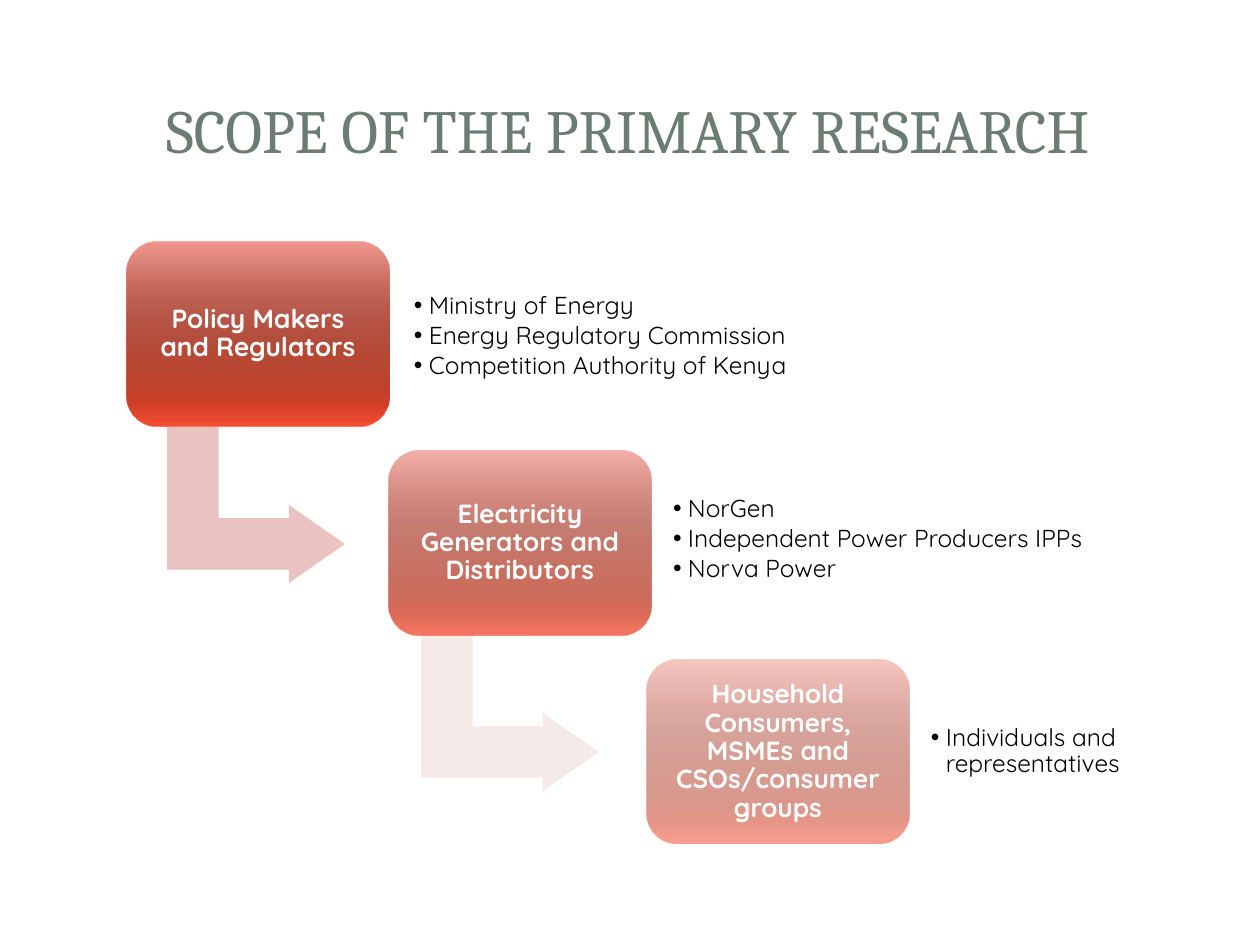
import dataclasses

import lxml.etree
import pptx
import pptx.dml.color
import pptx.enum.shapes
import pptx.enum.text
import pptx.oxml.ns
import pptx.util

PX = 914400 / 126
qn = pptx.oxml.ns.qn


@dataclasses.dataclass(frozen=True)
class Theme:
    heading_font: str = "Cambria"
    body_font: str = "Quicksand"
    heading: str = "6B7D72"
    label: str = "FFFFFF"
    detail: str = "000000"
    heading_size: int = 35
    label_size: int = 15
    detail_size: int = 14
    gradient: tuple = (
        (0, "EF8E85"), (25, "C1584A"), (38, "B04839"), (55, "AD3A26"),
        (80, "BA2F18"), (88, "CD2C10"), (100, "F63D1F"),
    )


THEME = Theme()
STAGE_SIZE = (262, 184)
TURN_SIZE = (156, 178)
DETAIL_HEIGHT = 149

STAGES = [
    {
        "at": (127, 242), "opacity": 90,
        "label": "Policy Makers and Regulators",
        "details": ["Ministry of Energy", "Energy Regulatory Commission",
                    "Competition Authority of Kenya"],
        "detail_box": (279, 20, 651), "turn": (51, 174, "E9C3C0"),
    },
    {
        "at": (389, 451), "opacity": 70,
        "label": "Electricity Generators and Distributors",
        "details": ["NorGen", "Independent Power Producers IPPs", "Norva Power"],
        "detail_box": (276, 14, 470), "turn": (43, 173, "F6EAE9"),
    },
    {
        "at": (647, 660), "opacity": 50,
        "label": "Household Consumers, MSMEs and CSOs/consumer groups",
        "details": ["Individuals and representatives"],
        "detail_box": (276, 17, 241), "turn": None,
    },
]


def emu(*lengths):
    return [pptx.util.Emu(round(length * PX)) for length in lengths]


def rgb(colour):
    return pptx.dml.color.RGBColor.from_string(colour)


def format_runs(paragraph, font, size, colour, bold=False):
    for run in paragraph.runs:
        run.font.name = font
        run.font.size = pptx.util.Pt(size)
        run.font.color.rgb = rgb(colour)
        run.font.bold = bold


def prepare_frame(frame, margin):
    frame.word_wrap = True
    frame.vertical_anchor = pptx.enum.text.MSO_ANCHOR.MIDDLE
    inset, = emu(margin)
    frame.margin_left = frame.margin_right = inset
    frame.margin_top = frame.margin_bottom = inset


def add_plain_shape(slide, kind, box):
    shape = slide.shapes.add_shape(kind, *emu(*box))
    shape.shadow.inherit = False
    shape.line.fill.background()
    return shape


def fill_with_gradient(shape, opacity):
    shape.fill.gradient()
    shape.fill.gradient_angle = 270
    stops = shape._element.spPr.find(qn("a:gradFill")).find(qn("a:gsLst"))
    for stop in list(stops):
        stops.remove(stop)
    for position, colour in THEME.gradient:
        stop = lxml.etree.SubElement(stops, qn("a:gs"), pos=str(position * 1000))
        tint = lxml.etree.SubElement(stop, qn("a:srgbClr"), val=colour)
        lxml.etree.SubElement(tint, qn("a:alpha"), val=str(opacity * 1000))


def add_bullet(paragraph):
    indent, = emu(15)
    properties = paragraph._p.get_or_add_pPr()
    properties.set("marL", str(indent))
    properties.set("indent", str(-indent))
    lxml.etree.SubElement(properties, qn("a:buFont"), typeface="Arial")
    lxml.etree.SubElement(properties, qn("a:buChar"), char="•")


def add_heading(slide, box, text):
    frame = slide.shapes.add_textbox(*emu(*box)).text_frame
    prepare_frame(frame, 8)
    frame.text = text
    heading = frame.paragraphs[0]
    heading.alignment = pptx.enum.text.PP_ALIGN.CENTER
    format_runs(heading, THEME.heading_font, THEME.heading_size, THEME.heading)


def add_turn(slide, box, colour):
    turn = add_plain_shape(slide, pptx.enum.shapes.MSO_SHAPE.BENT_UP_ARROW, box)
    turn.rotation = 90
    for index, value in enumerate((0.33, 0.25, 0.36)):
        turn.adjustments[index] = value
    turn.fill.solid()
    turn.fill.fore_color.rgb = rgb(colour)


def add_label_card(slide, box, text, opacity):
    card = add_plain_shape(slide, pptx.enum.shapes.MSO_SHAPE.ROUNDED_RECTANGLE, box)
    fill_with_gradient(card, opacity)
    prepare_frame(card.text_frame, 8)
    card.text_frame.text = text
    label = card.text_frame.paragraphs[0]
    label.alignment = pptx.enum.text.PP_ALIGN.CENTER
    label.line_spacing = 0.9
    format_runs(label, THEME.body_font, THEME.label_size, THEME.label, bold=True)


def add_details(slide, box, details):
    frame = slide.shapes.add_textbox(*emu(*box)).text_frame
    prepare_frame(frame, 8)
    for index, text in enumerate(details):
        detail = frame.add_paragraph() if index else frame.paragraphs[0]
        detail.text = text
        add_bullet(detail)
        detail.line_spacing = 0.9
        detail.space_after = pptx.util.Pt(2)
        format_runs(detail, THEME.body_font, THEME.detail_size, THEME.detail)


def add_stage(slide, box, stage):
    left, top, width, height = box
    if stage["turn"]:
        across, down, colour = stage["turn"]
        add_turn(slide, (left + across, top + down, *TURN_SIZE), colour)
    add_label_card(slide, box, stage["label"], stage["opacity"])
    across, down, detail_width = stage["detail_box"]
    add_details(slide, (left + across, top + down, detail_width, DETAIL_HEIGHT),
                stage["details"])


def main():
    presentation = pptx.Presentation()
    presentation.slide_width, presentation.slide_height = emu(1260, 945)
    slide = presentation.slides.add_slide(presentation.slide_layouts[6])
    add_heading(slide, (59, 57, 1138, 144), "SCOPE OF THE PRIMARY RESEARCH")
    for stage in STAGES:
        add_stage(slide, (*stage["at"], *STAGE_SIZE), stage)
    presentation.save("out.pptx")


if __name__ == "__main__":
    main()
